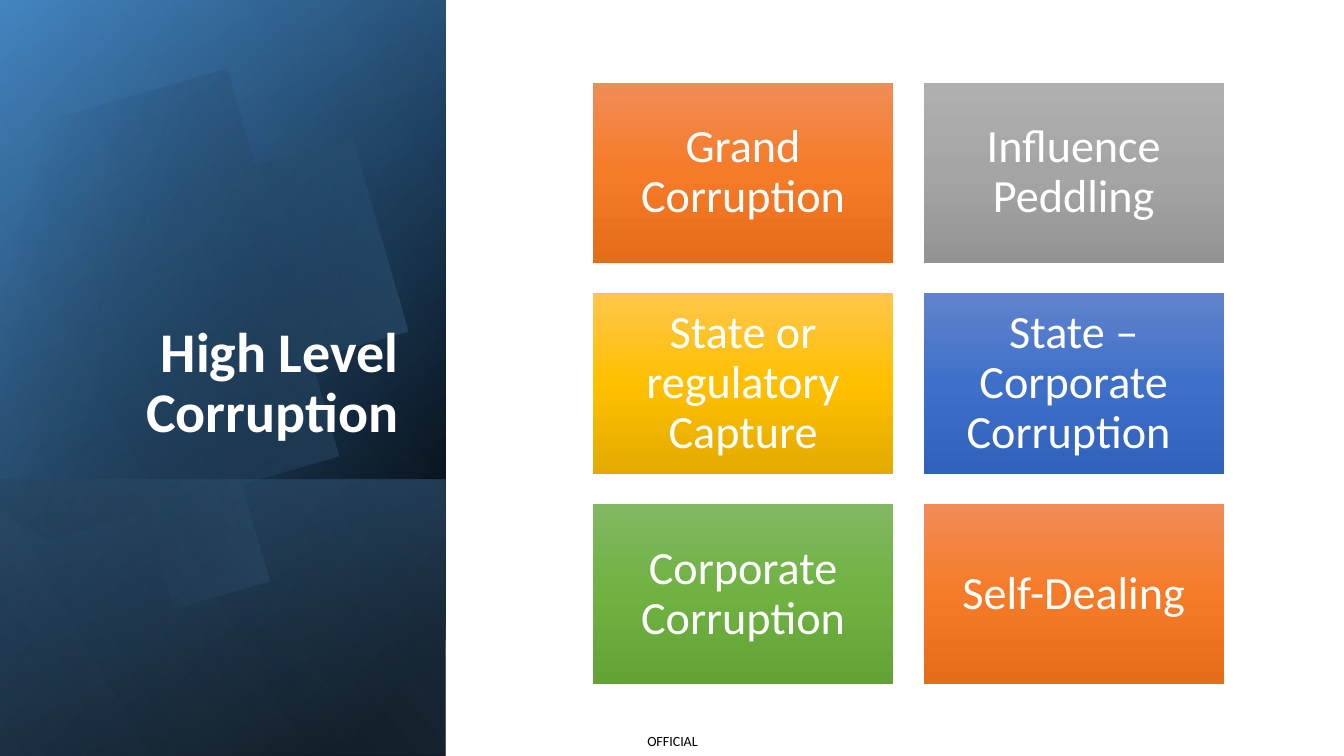
import math
from lxml import etree
from pptx import Presentation, util as u
from pptx.dml.color import RGBColor
from pptx.enum import shapes, text
from pptx.oxml.ns import qn

# Content
TITLE = "High Level Corruption"
FOOTER = "OFFICIAL"
ORANGE = ("F18C57", "F67B28", "E56C19")
CARDS = [
    ("Grand Corruption", ORANGE),
    ("Influence Peddling", ("AFAFAF", "A5A5A5", "939393")),
    ("State or regulatory Capture", ("FFC64B", "FFC000", "E3AB00")),
    ("State – Corporate Corruption ", ("6183CB", "3E70CA", "3062BB")),
    ("Corporate Corruption", ("81B861", "6FB242", "62A336")),
    ("Self-Dealing", ORANGE),
]

# Side panel layers: top, height, gradient angle, stops (position, colour, opacity)
W, H = 13.33, 7.5
PANEL_W = 4.42
BASE_LAYERS = [
    (0, H, 50, [(8, "000000", 100), (100, "2E75B6", 100)]),
    (0, H, 30, [(0, "000000", 0), (99, "5B9BD5", 46)]),
    (4.76, H - 4.76, 130, [(2, "5B9BD5", 29), (100, "000000", 30)]),
]
TOP_LAYER = (0, H, 120, [(0, "000000", 0), (99, "9DC3E6", 11)])

# Disc cut off at the left: start point, Bezier segments, then straight edges
DISC_TURN = -16.1
DISC_CENTRE = (1.585, 3.345)
DISC_STOPS = [(29, "000000", 0), (100, "5B9BD5", 43)]
DISC_PATH = [
    [(1.49, 1.1)],
    [(2.46, 1.12), (3.35, 1.77), (3.63, 2.75)],
    [(3.98, 3.97), (3.28, 5.23), (2.07, 5.58)],
    [(1.31, 5.8), (0.53, 5.61), (-0.03, 5.14)],
    [(-0.15, 5.03)],
    [(-0.15, 1.75)],
    [(0, 1.61)],
    [(0.23, 1.42), (0.5, 1.28), (0.8, 1.19)],
    [(1.03, 1.13), (1.26, 1.1), (1.49, 1.1)],
]

# Card grid
COLS = 2
GRID_X, GRID_Y = 5.88, 0.82
CARD_W, CARD_H = 2.98, 1.79
GAP = 0.3

prs = Presentation()
prs.slide_width, prs.slide_height = u.Inches(W), u.Inches(H)
s = prs.slides.add_slide(prs.slide_layouts[6])


def color(hex_code):
    return RGBColor.from_string(hex_code)


def paint(sp, stops, angle):
    """Gradient fill with opacity, no outline and no shadow."""
    sp.shadow.inherit = False
    sp.line.fill.background()
    sp.fill.background()
    grad = etree.Element(qn("a:gradFill"), rotWithShape="1")
    stop_list = etree.SubElement(grad, qn("a:gsLst"))
    for pos, hex_code, opacity in stops:
        gs = etree.SubElement(stop_list, qn("a:gs"), pos=str(pos * 1000))
        clr = etree.SubElement(gs, qn("a:srgbClr"), val=str(color(hex_code)))
        if opacity < 100:
            etree.SubElement(clr, qn("a:alpha"), val=str(opacity * 1000))
    etree.SubElement(grad, qn("a:lin"), ang=str(angle * 60000), scaled="0")
    sp_pr = sp.element.spPr
    sp_pr.replace(sp_pr.find(qn("a:noFill")), grad)


def add_rect(x, y, w, h):
    return s.shapes.add_shape(shapes.MSO_SHAPE.RECTANGLE,
                              *(u.Inches(v) for v in (x, y, w, h)))


def add_layer(top, height, angle, stops):
    """Panel layer, turned a quarter and mirrored."""
    mid_y = top + height / 2
    sp = add_rect((PANEL_W - height) / 2, mid_y - PANEL_W / 2, height, PANEL_W)
    sp.rotation = 90
    sp.element.spPr.find(qn("a:xfrm")).set("flipH", "1")
    paint(sp, stops, angle)


def write(sp, content, size, align=text.PP_ALIGN.CENTER, anchor=text.MSO_ANCHOR.MIDDLE,
          bold=False, hex_code="FFFFFF", spacing=0.9, inset=(0.14, 0.14)):
    tf = sp.text_frame
    tf.word_wrap = True
    tf.vertical_anchor = anchor
    tf.margin_left = tf.margin_right = u.Inches(inset[0])
    tf.margin_top = tf.margin_bottom = u.Inches(inset[1])
    p = tf.paragraphs[0]
    p.alignment, p.line_spacing = align, spacing
    r = p.add_run()
    r.text = content
    r.font.name, r.font.size, r.font.bold = "Calibri", u.Pt(size), bold
    r.font.color.rgb = color(hex_code)


def add_text(x, y, w, h, content, size, **fmt):
    sp = s.shapes.add_textbox(*(u.Inches(v) for v in (x, y, w, h)))
    write(sp, content, size, **fmt)


def bezier(p0, p1, p2, p3, steps=24):
    for i in range(1, steps + 1):
        t = i / steps
        weights = ((1 - t) ** 3, 3 * t * (1 - t) ** 2, 3 * t * t * (1 - t), t ** 3)
        yield tuple(sum(k * q[axis] for k, q in zip(weights, (p0, p1, p2, p3)))
                    for axis in (0, 1))


def unturn(point):
    """Place of a point before the disc is rotated."""
    a = math.radians(-DISC_TURN)
    cx, cy = DISC_CENTRE
    dx, dy = point[0] - cx, point[1] - cy
    return (cx + dx * math.cos(a) - dy * math.sin(a),
            cy + dx * math.sin(a) + dy * math.cos(a))


def add_disc():
    points = list(DISC_PATH[0])
    for seg in DISC_PATH[1:]:
        points.extend(bezier(points[-1], *seg) if len(seg) == 3 else seg)
    points = [unturn(pt) for pt in points]
    fb = s.shapes.build_freeform(*points[0], scale=u.Inches(1))
    fb.add_line_segments(points[1:], close=True)
    sp = fb.convert_to_shape()
    sp.rotation = DISC_TURN
    paint(sp, DISC_STOPS, 30)


# Footer
add_text(6.27, 7.21, 0.8, 0.29, FOOTER, 10, hex_code="000000", spacing=1, inset=(0, 0))

# Side panel with title
for layer in BASE_LAYERS:
    add_layer(*layer)
add_disc()
add_layer(*TOP_LAYER)
add_text(0.64, 1.84, 3.41, 2.62, TITLE, 40, bold=True, inset=(0.1, 0.05),
         align=text.PP_ALIGN.RIGHT, anchor=text.MSO_ANCHOR.BOTTOM)

# Cards
for i, (label, shades) in enumerate(CARDS):
    row, col = divmod(i, COLS)
    card = add_rect(GRID_X + col * (CARD_W + GAP), GRID_Y + row * (CARD_H + GAP),
                    CARD_W, CARD_H)
    paint(card, [(pos, shade, 100) for pos, shade in zip((0, 50, 100), shades)], 90)
    write(card, label, 33)

prs.save("out.pptx")
